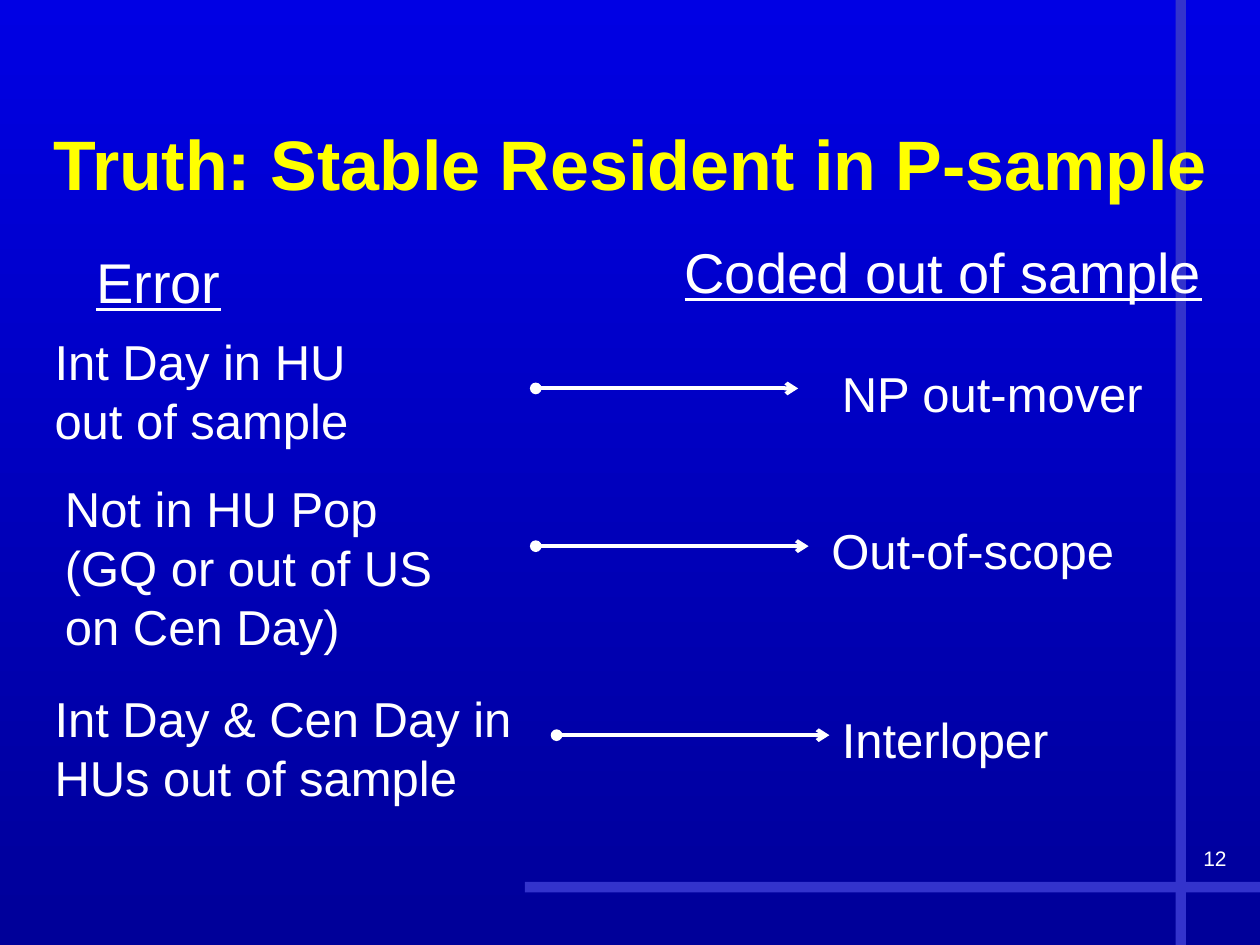
from lxml import etree
from pptx import Presentation
from pptx.dml.color import RGBColor
from pptx.enum.shapes import MSO_CONNECTOR, MSO_SHAPE
from pptx.enum.text import MSO_ANCHOR, MSO_AUTO_SIZE, PP_ALIGN
from pptx.oxml.ns import qn
from pptx.util import Cm, Pt

RECTANGLE = MSO_SHAPE.RECTANGLE
STRAIGHT = MSO_CONNECTOR.STRAIGHT
MIDDLE = MSO_ANCHOR.MIDDLE
GROW, FIXED = MSO_AUTO_SIZE.SHAPE_TO_FIT_TEXT, MSO_AUTO_SIZE.NONE
LEFT, CENTER, RIGHT = PP_ALIGN.LEFT, PP_ALIGN.CENTER, PP_ALIGN.RIGHT

TITLE_ONLY = 5
WIDTH, HEIGHT = 25.4, 19.05
BAR = 0.21

ROWS = [
    ("Int Day in HU\nout of sample", (0.85, 6.56, 8.47, 2.65),
     (10.8, 16.09, 7.83),
     "NP out-mover", (16.72, 7.2, 6.99, 2.65)),
    ("Not in HU Pop (GQ or out of US on Cen Day)", (1.06, 9.53, 8.05, 3.84),
     (10.8, 16.3, 11.01),
     "Out-of-scope", (16.51, 10.37, 7.62, 2.65)),
    ("Int Day & Cen Day in HUs out of sample", (0.85, 13.76, 10.16, 2.65),
     (11.22, 16.72, 14.82),
     "Interloper", (16.72, 14.18, 5.08, 1.45)),
]


def color(value):
    return RGBColor.from_string(value)


def lengths(place):
    return [Cm(value) for value in place]


class SlideBuilder:
    font = "Arial"
    ink = "FFFFFF"
    title_ink = "FFFF00"
    accent = "3333CC"
    gradient = ("0000E4", "000099")

    def __init__(self, page):
        self.page = page

    def background(self):
        fill = self.page.background.fill
        fill.gradient()
        fill.gradient_angle = 270
        for stop, value in zip(fill.gradient_stops, self.gradient):
            stop.color.rgb = color(value)

    def bar(self, *place):
        shape = self.page.shapes.add_shape(RECTANGLE, *lengths(place))
        shape.shadow.inherit = False
        shape.fill.solid()
        shape.fill.fore_color.rgb = color(self.accent)
        shape.line.fill.background()
        self.page.shapes.element.insert(2, shape.element)

    def set_text(self, frame, text, size, ink, align, bold=False, underline=False):
        frame.word_wrap = True
        frame.text = text
        for paragraph in frame.paragraphs:
            paragraph.alignment = align
            for span in paragraph.runs:
                span.font.name = self.font
                span.font.size = Pt(size)
                span.font.bold = bold
                span.font.underline = underline
                span.font.color.rgb = color(ink)

    def title(self, text, place):
        box = self.page.shapes.title
        box.left, box.top, box.width, box.height = lengths(place)
        frame = box.text_frame
        frame.auto_size = FIXED
        frame.vertical_anchor = MIDDLE
        self.set_text(frame, text, 40, self.title_ink, CENTER, bold=True)

    def label(self, text, place, size=28, align=LEFT, underline=False, fit=GROW):
        box = self.page.shapes.add_textbox(*lengths(place))
        self.set_text(box.text_frame, text, size, self.ink, align, underline=underline)
        box.text_frame.auto_size = fit

    def arrow(self, start, end, height):
        connector = self.page.shapes.add_connector(
            STRAIGHT, *lengths((start, height, end, height)))
        connector.line.color.rgb = color(self.ink)
        connector.line.width = Pt(2.25)
        properties = connector.element.spPr
        outline = properties.find(qn("a:ln"))
        etree.SubElement(outline, qn("a:headEnd"), type="oval")
        etree.SubElement(outline, qn("a:tailEnd"), type="arrow")
        etree.SubElement(properties, qn("a:effectLst"))


def main():
    deck = Presentation()
    deck.slide_width, deck.slide_height = Cm(WIDTH), Cm(HEIGHT)
    page = deck.slides.add_slide(deck.slide_layouts[TITLE_ONLY])
    builder = SlideBuilder(page)
    builder.background()
    builder.bar(10.58, 17.78, WIDTH - 10.58, BAR)
    builder.bar(23.7, 0, BAR, HEIGHT)
    builder.title("Truth: Stable Resident in P-sample", (0.64, 1.69, 24.13, 3.18))
    builder.label("Error", (1.69, 4.87, 9.31, 1.62), size=32, underline=True)
    builder.label("Coded out of sample", (13.55, 4.66, 11.43, 1.62),
                  size=32, underline=True)
    for error, error_place, arrow, code, code_place in ROWS:
        builder.label(error, error_place)
        builder.arrow(*arrow)
        builder.label(code, code_place)
    builder.label("12", (19.69, 16.93, 5.29, 1.27), size=12, align=RIGHT, fit=FIXED)
    deck.save("out.pptx")


if __name__ == "__main__":
    main()
